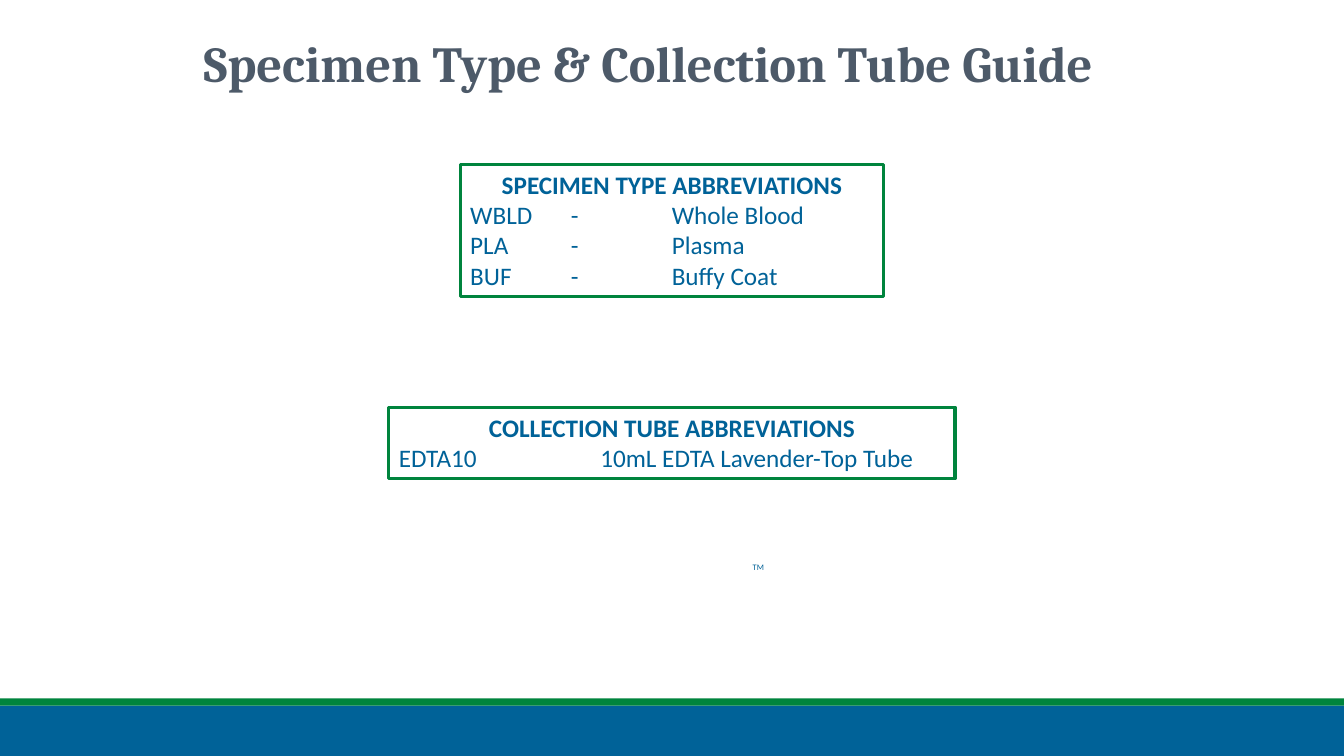
import pptx
import pptx.util
import pptx.dml.color
import pptx.enum.shapes
import pptx.enum.text
import pptx.oxml.ns
import lxml.etree

Cm = pptx.util.Cm
Pt = pptx.util.Pt
RGBColor = pptx.dml.color.RGBColor
RECT = pptx.enum.shapes.MSO_SHAPE.RECTANGLE
ALIGN = pptx.enum.text.PP_ALIGN
ANCHOR = pptx.enum.text.MSO_ANCHOR
FIT = pptx.enum.text.MSO_AUTO_SIZE
qn = pptx.oxml.ns.qn

BLUE = RGBColor(0x00, 0x62, 0x98)
GREEN = RGBColor(0x00, 0x84, 0x3D)
SLATE = RGBColor(0x4D, 0x5A, 0x69)

deck = pptx.Presentation()
deck.slide_width = Cm(33.87)
deck.slide_height = Cm(19.05)
slide = deck.slides.add_slide(deck.slide_layouts[5])
shapes = slide.shapes


def style(para, size, bold, align):
    para.alignment = align
    for run in para.runs:
        run.font.name = "Calibri"
        run.font.size = Pt(size)
        run.font.bold = bold
        run.font.color.rgb = BLUE


def add_tabs(para, stops):
    props = para._p.get_or_add_pPr()
    tabs = lxml.etree.SubElement(props, qn("a:tabLst"))
    for stop in stops:
        tab = lxml.etree.SubElement(tabs, qn("a:tab"))
        tab.set("pos", str(Cm(stop)))
        tab.set("algn", "l")


# Footer bands
for top, height, color in [(17.78, 1.27, BLUE), (17.6, 0.18, GREEN)]:
    band = shapes.add_shape(RECT, 0, Cm(top), deck.slide_width, Cm(height))
    band.shadow.inherit = False
    band.fill.solid()
    band.fill.fore_color.rgb = color
    band.line.fill.background()

# Title
title = shapes.title
title.left, title.top = Cm(4.88), Cm(0.08)
title.width, title.height = Cm(24.13), Cm(3.18)
frame = title.text_frame
frame.text = "Specimen Type & Collection Tube Guide"
frame.vertical_anchor = ANCHOR.MIDDLE
para = frame.paragraphs[0]
para.alignment = ALIGN.LEFT
para.line_spacing = 0.9
font = para.runs[0].font
font.name = "Cambria"
font.size = Pt(36)
font.bold = True
font.color.rgb = SLATE

# Boxes of abbreviations, centred on the slide
boxes = [
    (4.14, 10.67, 3.33, [
        "SPECIMEN TYPE ABBREVIATIONS",
        "WBLD\t-\tWhole Blood",
        "PLA\t-\tPlasma",
        "BUF\t-\tBuffy Coat",
    ]),
    (10.26, 14.27, 1.8, [
        "COLLECTION TUBE ABBREVIATIONS",
        "EDTA10\t\t10mL EDTA Lavender-Top Tube",
    ]),
]
for top, width, height, lines in boxes:
    left = (33.87 - width) / 2
    box = shapes.add_shape(RECT, Cm(left), Cm(top), Cm(width), Cm(height))
    box.shadow.inherit = False
    box.fill.background()
    box.line.color.rgb = GREEN
    box.line.width = Pt(2.25)
    frame = box.text_frame
    frame.word_wrap = True
    frame.auto_size = FIT.SHAPE_TO_FIT_TEXT
    frame.vertical_anchor = ANCHOR.TOP
    frame.text = "\n".join(lines)
    head, *rows = frame.paragraphs
    style(head, 18, True, ALIGN.CENTER)
    for row in rows:
        add_tabs(row, [2.54, 5.08])
        style(row, 18, False, ALIGN.LEFT)

# Trademark sign
mark = shapes.add_textbox(Cm(18.72), Cm(14.03), Cm(0.99), Cm(0.51))
frame = mark.text_frame
frame.word_wrap = True
frame.auto_size = FIT.SHAPE_TO_FIT_TEXT
frame.text = "TM"
style(frame.paragraphs[0], 6, False, ALIGN.LEFT)

deck.save("out.pptx")
